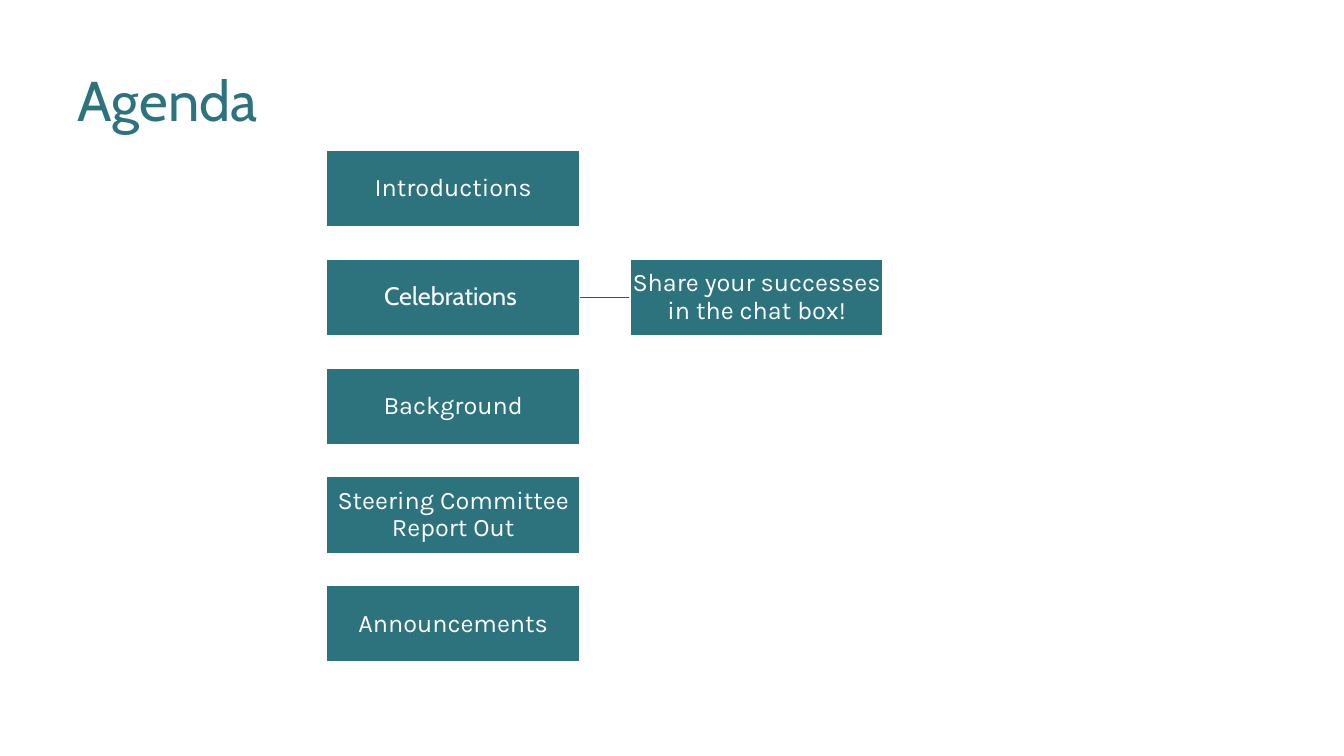
from lxml.etree import SubElement
from pptx import Presentation
from pptx.dml.color import RGBColor
from pptx.enum.shapes import MSO_CONNECTOR, MSO_SHAPE
from pptx.enum.text import MSO_ANCHOR, PP_ALIGN
from pptx.oxml.ns import qn
from pptx.util import Inches, Pt

COLORS = {"teal": "2D737E", "dark_teal": "245C65", "white": "FFFFFF"}
HEADING_FONT, BODY_FONT = "Cabin", "Karla"

# Each agenda item: text, font, optional side note
AGENDA = [
    ("Introductions", BODY_FONT, None),
    ("Celebrations ", HEADING_FONT, "Share your successes in the chat box!"),
    ("Background", BODY_FONT, None),
    ("Steering Committee Report Out", BODY_FONT, None),
    ("Announcements", BODY_FONT, None),
]
BOX_WIDTH, BOX_HEIGHT = 2.51, 0.76
ROW_PITCH, NOTE_GAP = 1.08, 0.5


def color(name):
    return RGBColor.from_string(COLORS[name])


def write_text(shape, text, *, font, size, fill, align, anchor, insets,
               line_spacing):
    frame = shape.text_frame
    frame.word_wrap = True
    frame.vertical_anchor = anchor
    (frame.margin_left, frame.margin_top,
     frame.margin_right, frame.margin_bottom) = map(Inches, insets)
    paragraph = frame.paragraphs[0]
    paragraph.alignment = align
    paragraph.line_spacing = line_spacing
    paragraph.space_before = Pt(0)
    run = paragraph.add_run()
    run.text = text
    run.font.name = font
    run.font.size = Pt(size)
    run.font.color.rgb = color(fill)


def add_title(slide, left, top, width, height):
    title = slide.shapes.title
    title.left, title.top = Inches(left), Inches(top)
    title.width, title.height = Inches(width), Inches(height)
    write_text(title, "Agenda", font=HEADING_FONT, size=40, fill="teal",
               align=PP_ALIGN.LEFT, anchor=MSO_ANCHOR.BOTTOM,
               insets=(0.1, 0.05, 0.1, 0.1), line_spacing=1.0)


def add_box(slide, left, top, text, font):
    box = slide.shapes.add_shape(
        MSO_SHAPE.RECTANGLE, Inches(left), Inches(top),
        Inches(BOX_WIDTH), Inches(BOX_HEIGHT))
    box.shadow.inherit = False
    box.fill.solid()
    box.fill.fore_color.rgb = color("teal")
    box.line.color.rgb = color("white")
    box.line.width = Pt(1)
    write_text(box, text, font=font, size=18, fill="white",
               align=PP_ALIGN.CENTER, anchor=MSO_ANCHOR.MIDDLE,
               insets=(0.01,) * 4, line_spacing=0.9)


def add_link(slide, left, y, width):
    link = slide.shapes.add_connector(
        MSO_CONNECTOR.STRAIGHT, Inches(left), Inches(y),
        Inches(left + width), Inches(y))
    link.line.color.rgb = color("dark_teal")
    link.line.width = Pt(1)
    SubElement(link._element.spPr, qn("a:effectLst"))


def add_agenda(slide, left, top):
    for row, (item, font, note) in enumerate(AGENDA):
        row_top = top + row * ROW_PITCH
        # Side note and its link sit to the right of the item
        if note:
            item_right = left + BOX_WIDTH
            add_link(slide, item_right, row_top + BOX_HEIGHT / 2, NOTE_GAP)
            add_box(slide, item_right + NOTE_GAP, row_top, note, BODY_FONT)
        add_box(slide, left, row_top, item, font)


def main():
    deck = Presentation()
    deck.slide_width, deck.slide_height = Inches(13.33), Inches(7.5)
    slide = deck.slides.add_slide(deck.slide_layouts[5])
    slide.background.fill.solid()
    slide.background.fill.fore_color.rgb = color("white")
    add_title(slide, 0.67, 0.3, 11, 1.12)
    add_agenda(slide, 3.24, 1.49)
    deck.save("out.pptx")


if __name__ == "__main__":
    main()
